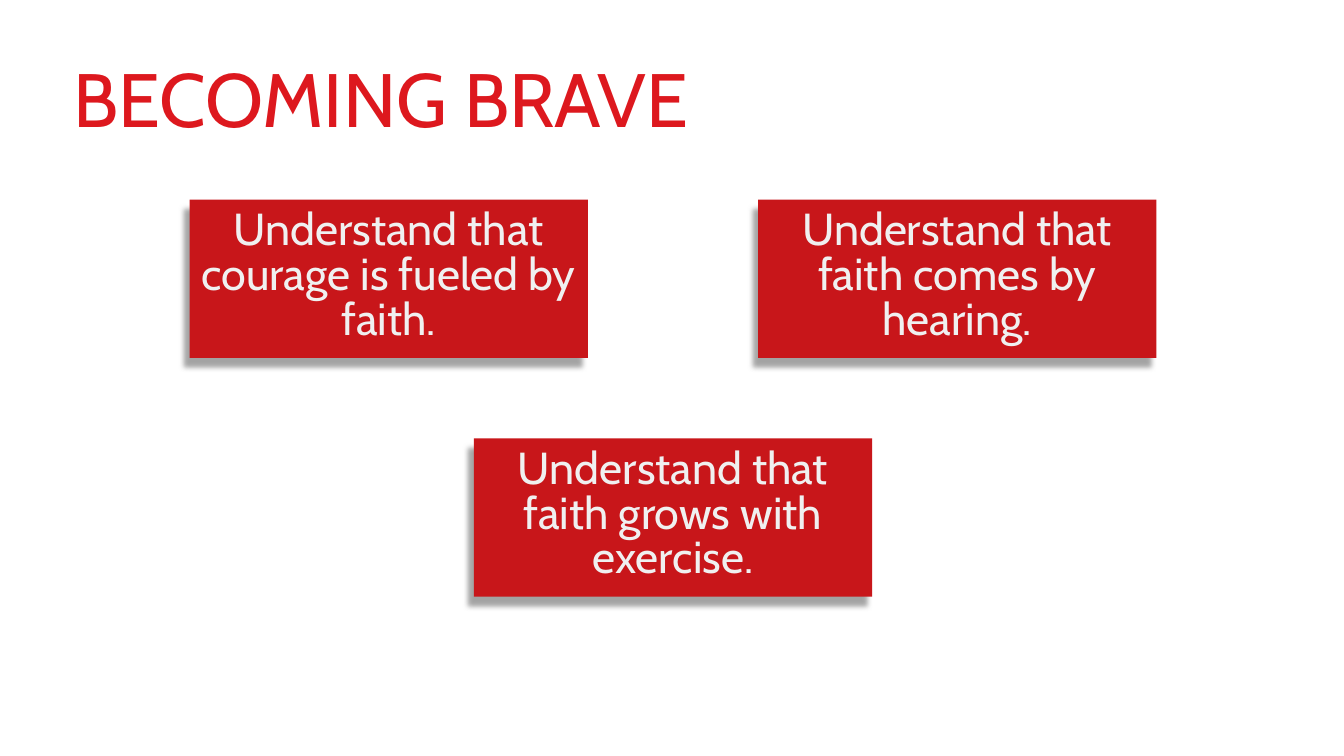
from dataclasses import dataclass

from lxml import etree
from pptx import Presentation
from pptx import util as u
from pptx.dml.color import RGBColor
from pptx.enum import shapes, text
from pptx.oxml.ns import qn


@dataclass(frozen=True)
class Theme:
    font: str = "Cabin"
    title: str = "DD181E"
    card: str = "C8161A"
    ink: str = "F0F0F0"
    shade: str = "595959"
    big: int = 54
    body: int = 32


class Deck:
    def __init__(self, theme):
        self.theme = theme
        self.prs = Presentation()
        self.prs.slide_width = u.Inches(13.33)
        self.prs.slide_height = u.Inches(7.5)
        self.slide = self.prs.slides.add_slide(self.prs.slide_layouts[6])

    def label(self, shape, words, size, color, frame, para):
        """Fill the shape with one paragraph; frame and para hold format values."""
        box = shape.text_frame
        line = box.paragraphs[0]
        line.text = words
        font = line.runs[0].font
        look = {"name": self.theme.font, "size": u.Pt(size)}
        for item, values in ((box, frame), (line, para), (font, look)):
            for key, value in values.items():
                setattr(item, key, value)
        font.color.rgb = RGBColor.from_string(color)

    def title(self, words, *area):
        shape = self.slide.shapes.add_textbox(*map(u.Inches, area))
        frame = {"word_wrap": True,
                 "auto_size": text.MSO_AUTO_SIZE.SHAPE_TO_FIT_TEXT}
        self.label(shape, words, self.theme.big, self.theme.title, frame, {})

    def card(self, words, *area):
        shape = self.slide.shapes.add_shape(
            shapes.MSO_SHAPE.RECTANGLE, *map(u.Inches, area))
        shape.fill.solid()
        shape.fill.fore_color.rgb = RGBColor.from_string(self.theme.card)
        shape.line.fill.background()
        self.shade(shape)
        edge = u.Inches(0.1)
        frame = {"word_wrap": True, "vertical_anchor": text.MSO_ANCHOR.TOP,
                 "margin_left": edge, "margin_top": edge,
                 "margin_right": edge, "margin_bottom": 0}
        para = {"alignment": text.PP_ALIGN.CENTER,
                "line_spacing": u.Pt(self.theme.body)}
        self.label(shape, words, self.theme.body, self.theme.ink, frame, para)

    def shade(self, shape):
        """Cast a soft shadow down and to the left."""
        shape.shadow.inherit = False
        effects = shape._element.spPr.find(qn("a:effectLst"))
        outer = etree.SubElement(
            effects, qn("a:outerShdw"), blurRad=str(u.Pt(4)), dist=str(u.Pt(8)),
            dir=str(120 * 60000), algn="ctr", rotWithShape="0")
        color = etree.SubElement(outer, qn("a:srgbClr"), val=self.theme.shade)
        etree.SubElement(color, qn("a:alpha"), val="55000")


def main():
    deck = Deck(Theme())
    deck.title("BECOMING BRAVE", 0.63, 0.47, 9.84, 1.01)
    left, top, step, drop = 1.88, 1.98, 2.82, 2.37
    cards = (
        (0, 0, "Understand that courage is fueled by faith."),
        (2, 0, "Understand that faith comes by hearing."),
        (1, 1, "Understand that faith grows with exercise."),
    )
    for col, row, words in cards:
        deck.card(words, left + col * step, top + row * drop, 3.95, 1.57)
    deck.prs.save("out.pptx")


if __name__ == "__main__":
    main()
